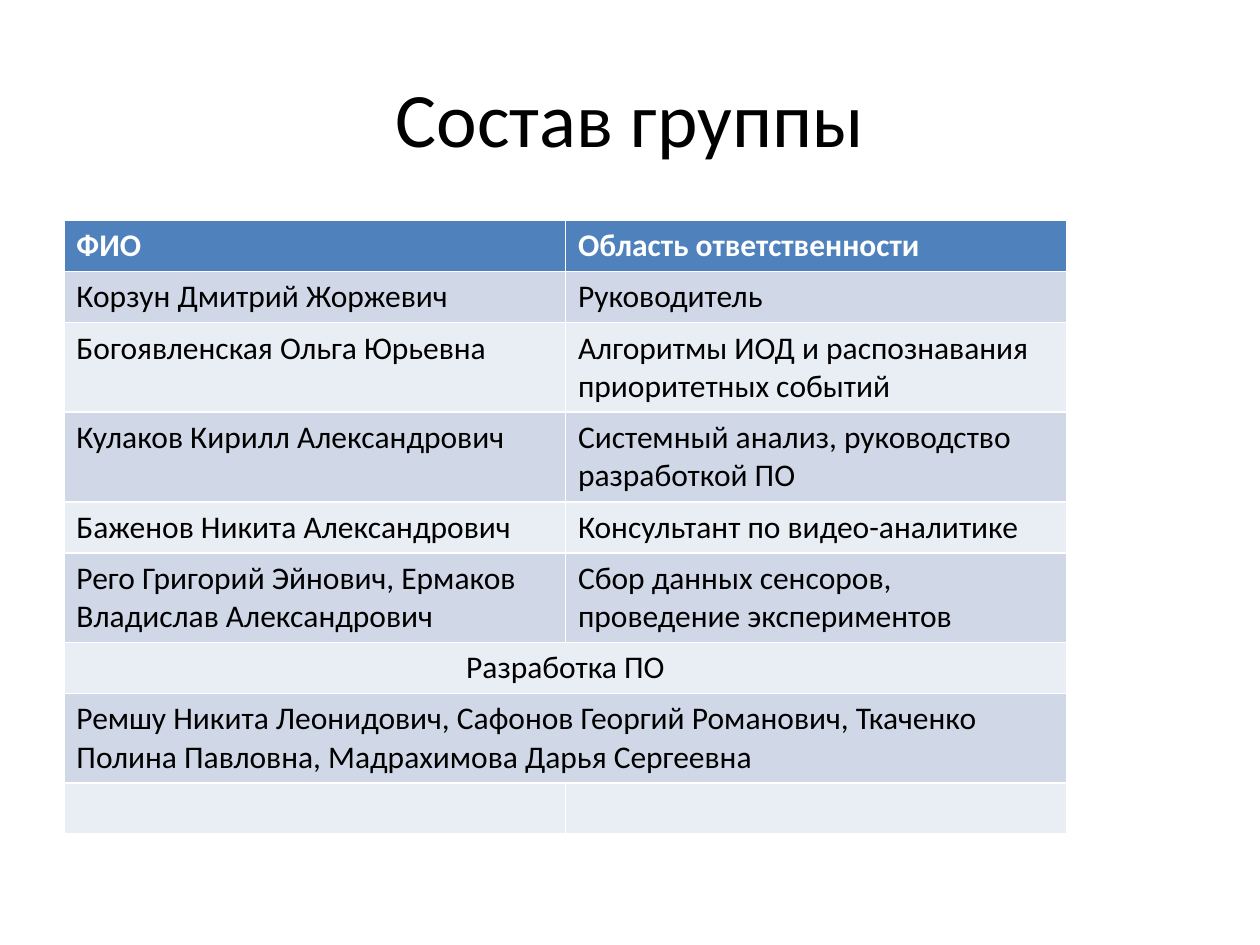
from typing import NamedTuple

from pptx import Presentation
from pptx.dml.color import RGBColor
from pptx.enum.text import MSO_ANCHOR, PP_ALIGN
from pptx.util import Pt

FONT = "Calibri"
HUES = {"text": "000000", "head": "4F81BD", "light": "FFFFFF",
        "odd": "D0D8E8", "even": "E9EDF4"}
ROW_H = 29.2
COL_W = 286.6


class Row(NamedTuple):
    name: str = ""
    duty: str = ""
    span: bool = False
    align: PP_ALIGN = PP_ALIGN.LEFT


ROWS = [
    Row("ФИО", "Область ответственности"),
    Row("Корзун Дмитрий Жоржевич", "Руководитель"),
    Row("Богоявленская Ольга Юрьевна",
        "Алгоритмы ИОД и распознавания приоритетных событий"),
    Row("Кулаков Кирилл Александрович",
        "Системный анализ, руководство разработкой ПО"),
    Row("Баженов Никита Александрович", "Консультант по видео-аналитике"),
    Row("Рего Григорий Эйнович, Ермаков Владислав Александрович",
        "Сбор данных сенсоров, проведение экспериментов"),
    Row("Разработка ПО", span=True, align=PP_ALIGN.CENTER),
    Row("Ремшу Никита Леонидович, Сафонов Георгий Романович, "
        "Ткаченко Полина Павловна, Мадрахимова Дарья Сергеевна", span=True),
    Row(),
]


def add_text(frame, text: str, size: float, hue: str,
             align: PP_ALIGN, bold: bool = False) -> None:
    para = frame.paragraphs[0]
    para.alignment = align
    run = para.add_run()
    run.text = text
    font = run.font
    font.name, font.size, font.bold = FONT, Pt(size), bold
    font.color.rgb = RGBColor.from_string(HUES[hue])


def add_title(slide, text: str) -> None:
    title = slide.shapes.title
    title.left, title.top = Pt(36), Pt(21.6)
    title.width, title.height = Pt(648), Pt(90)
    title.text_frame.vertical_anchor = MSO_ANCHOR.MIDDLE
    add_text(title.text_frame, text, 44, "text", PP_ALIGN.CENTER)


def fill_row(table, num: int, row: Row) -> None:
    head = num == 0
    band = "head" if head else "odd" if num % 2 else "even"
    table.rows[num].height = Pt(ROW_H)
    for col, text in enumerate((row.name, row.duty)):
        cell = table.cell(num, col)
        cell.fill.solid()
        cell.fill.fore_color.rgb = RGBColor.from_string(HUES[band])
        if text:
            add_text(cell.text_frame, text, 18,
                     "light" if head else "text", row.align, head)
    if row.span:
        table.cell(num, 0).merge(table.cell(num, 1))


def add_group(slide, rows: list[Row]) -> None:
    """Add the table of group members and their duties."""
    table = slide.shapes.add_table(
        len(rows), 2, Pt(36.5), Pt(126), Pt(2 * COL_W),
        Pt(ROW_H * len(rows))).table
    for col in table.columns:
        col.width = Pt(COL_W)
    for num, row in enumerate(rows):
        fill_row(table, num, row)


def main() -> None:
    deck = Presentation()
    deck.slide_width, deck.slide_height = Pt(720), Pt(540)
    slide = deck.slides.add_slide(deck.slide_layouts[5])
    add_title(slide, "Состав группы")
    add_group(slide, ROWS)
    deck.save("out.pptx")


if __name__ == "__main__":
    main()
